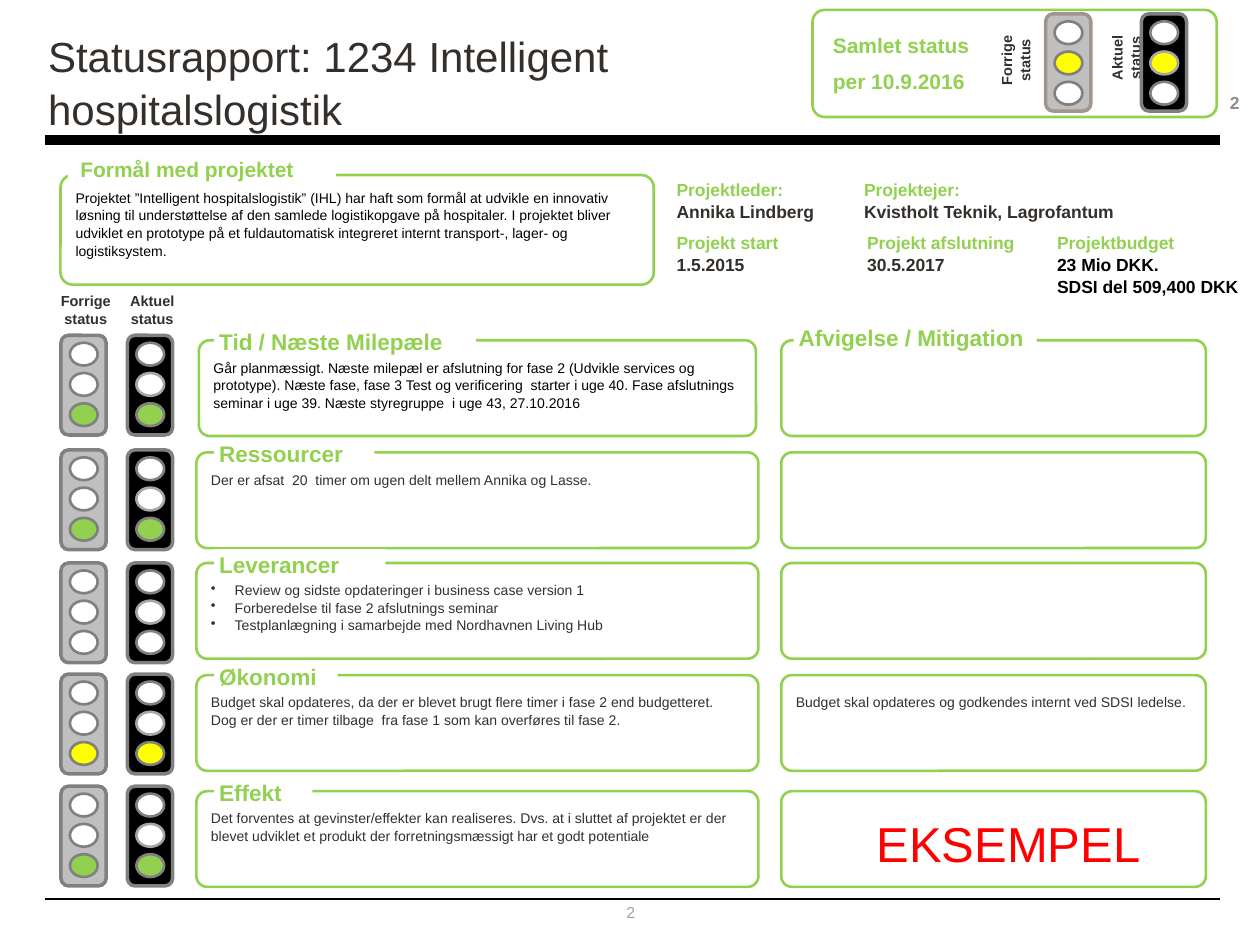
from lxml import etree
from pptx import Presentation
from pptx import util as u
from pptx.dml.color import RGBColor
from pptx.enum import shapes, text
from pptx.oxml.ns import qn

GREEN, YELLOW, WHITE, BLACK = "92D050", "FFFF00", "FFFFFF", "000000"
DARK, GREY, SILVER = "342F2B", "808080", "BFBFBF"
ROUND = shapes.MSO_SHAPE.ROUNDED_RECTANGLE
RECT = shapes.MSO_SHAPE.RECTANGLE
OVAL = shapes.MSO_SHAPE.OVAL
LEFT, CENTER, RIGHT = text.PP_ALIGN.LEFT, text.PP_ALIGN.CENTER, text.PP_ALIGN.RIGHT
TOP, MIDDLE = text.MSO_ANCHOR.TOP, text.MSO_ANCHOR.MIDDLE

deck = Presentation()
deck.slide_width, deck.slide_height = u.Cm(25.4), u.Cm(19.05)
slide = deck.slides.add_slide(deck.slide_layouts[5])


def draw(kind, at, fill=None, line=None, width=1.5, corner=None):
    item = slide.shapes.add_shape(kind, *[u.Cm(n) for n in at])
    item.shadow.inherit = False
    if fill:
        item.fill.solid()
        item.fill.fore_color.rgb = RGBColor.from_string(fill)
    else:
        item.fill.background()
    if line:
        item.line.color.rgb = RGBColor.from_string(line)
        item.line.width = u.Pt(width)
    else:
        item.line.fill.background()
    if corner:
        item.adjustments[0] = corner
    return item


def write(words, at=None, holder=None, size=8, colors=(DARK,), bold=False, align=LEFT,
          anchor=TOP, insets=(0, 0, 0, 0), before=0, bullet=None, wrap=True, turn=0):
    holder = holder or slide.shapes.add_textbox(*[u.Cm(n) for n in at])
    holder.rotation = turn
    frame = holder.text_frame
    frame.auto_size = text.MSO_AUTO_SIZE.NONE
    frame.word_wrap = wrap
    frame.vertical_anchor = anchor
    (frame.margin_left, frame.margin_top,
     frame.margin_right, frame.margin_bottom) = [u.Cm(n) for n in insets]
    for index, line in enumerate(words.split("\n")):
        paragraph = frame.paragraphs[0] if index == 0 else frame.add_paragraph()
        paragraph.text = line
        paragraph.alignment = align
        paragraph.line_spacing = 1.05
        paragraph.space_before = u.Pt(before if index else 0)
        if bullet:
            properties = paragraph._p.get_or_add_pPr()
            properties.set("marL", str(u.Cm(0.48)))
            properties.set("indent", str(-u.Cm(0.48)))
            etree.SubElement(properties, qn("a:buChar")).set("char", bullet)
        paragraph.font.name = "Arial"
        paragraph.font.size = u.Pt(size)
        paragraph.font.bold = bold
        paragraph.font.color.rgb = RGBColor.from_string(colors[min(index, len(colors) - 1)])


title = slide.shapes.title
title.left, title.top, title.width, title.height = [u.Cm(n) for n in (0.97, 0.56, 14.58, 2.06)]
write("Statusrapport: 1234 Intelligent hospitalslogistik", holder=title, size=24)

for rule_y, weight in ((2.82, 6), (18.13, 1)):
    rule = slide.shapes.add_connector(
        shapes.MSO_CONNECTOR.STRAIGHT, u.Cm(0.9), u.Cm(rule_y), u.Cm(24.6), u.Cm(rule_y))
    rule.line.color.rgb = RGBColor.from_string(BLACK)
    rule.line.width = u.Pt(weight)
    etree.SubElement(rule._element.spPr, qn("a:effectLst"))

write("2", (12.12, 18.19, 1.19, 0.38), size=9, colors=["A59D95"], align=CENTER, anchor=MIDDLE)
write("2", (23.47, 1.55, 1.52, 1.02), size=10, colors=["8C8C8C"], bold=True,
      align=RIGHT, anchor=MIDDLE)

purpose = draw(ROUND, (1.22, 3.53, 11.96, 2.21), WHITE, GREEN, corner=0.113)
write("Projektet ”Intelligent hospitalslogistik” (IHL) har haft som formål at udvikle en innovativ "
      "løsning til understøttelse af den samlede logistikopgave på hospitaler. I projektet bliver "
      "udviklet en prototype på et fuldautomatisk integreret internt transport-, lager- og "
      "logistiksystem.", holder=purpose, colors=[BLACK], insets=(0.23, 0.2, 0.23, 0.13))
purpose_heading = draw(RECT, (1.37, 3, 5.41, 0.76), WHITE)
write("Formål med projektet", holder=purpose_heading, size=12, colors=[GREEN], bold=True,
      insets=(0.25, 0.13, 0.25, 0.13))

facts = [
    ("Projektleder:\nAnnika Lindberg", 13.64, 3.58, 3.15, DARK),
    ("Projektejer:\nKvistholt Teknik, Lagrofantum", 17.42, 3.58, 6.88, DARK),
    ("Projekt start\n1.5.2015", 13.64, 4.65, 3.84, DARK),
    ("Projekt afslutning\n30.5.2017", 17.48, 4.65, 3.84, DARK),
    ("Projektbudget\n23 Mio DKK.\nSDSI del 509,400 DKK", 21.31, 4.65, 3.84, BLACK),
]
for fact, x, y, width, color in facts:
    write(fact, (x, y, width, 0.86), size=10, colors=[GREEN, color], bold=True)

draw(ROUND, (16.38, 0.2, 8.15, 2.16), line=GREEN, corner=0.113)
write("Samlet status\nper 10.9.2016", (16.79, 0.64, 3.96, 1.24), size=12, colors=[GREEN],
      bold=True, before=5.5)

for caption, x, y, width, turn in [
    ("Forrige status", 19.69, 0.86, 1.52, 270),
    ("Aktuel status", 21.95, 0.81, 1.45, 270),
    ("Forrige status", 0.97, 5.87, 1.52, 0),
    ("Aktuel status", 2.36, 5.87, 1.42, 0),
]:
    write(caption, (x, y, width, 0.71), size=8.3, bold=True, align=CENTER, turn=turn)

areas = [
    ("Tid / Næste Milepæle", 5.28, 6.86, 6.76, (WHITE, WHITE, GREEN),
     "Går planmæssigt. Næste milepæl er afslutning for fase 2 (Udvikle services og prototype). "
     "Næste fase, fase 3 Test og verificering  starter i uge 40. Fase afslutnings seminar i uge 39. "
     "Næste styregruppe  i uge 43, 27.10.2016", ""),
    ("Ressourcer", 3.23, 9.12, 9.07, (WHITE, WHITE, GREEN),
     "Der er afsat  20  timer om ugen delt mellem Annika og Lasse.", ""),
    ("Leverancer", 3.45, 11.35, 11.35, (WHITE, WHITE, WHITE),
     "Review og sidste opdateringer i business case version 1\n"
     "Forberedelse til fase 2 afslutnings seminar\n"
     "Testplanlægning i samarbejde med Nordhavnen Living Hub", ""),
    ("Økonomi", 2.49, 13.61, 13.59, (WHITE, WHITE, YELLOW),
     "Budget skal opdateres, da der er blevet brugt flere timer i fase 2 end budgetteret. Dog er "
     "der er timer tilbage  fra fase 1 som kan overføres til fase 2.",
     "Budget skal opdateres og godkendes internt ved SDSI ledelse."),
    ("Effekt", 1.98, 15.95, 15.85, (WHITE, WHITE, GREEN),
     "Det forventes at gevinster/effekter kan realiseres. Dvs. at i sluttet af projektet er der "
     "blevet udviklet et produkt der forretningsmæssigt har et godt potentiale", ""),
]
headings = [("Afvigelse / Mitigation", 16, 6.5, 4.9)]
signals = [(21.08, 0.28, 1.96, SILVER, "A1968D", (WHITE, YELLOW, WHITE)),
           (23.01, 0.28, 1.96, BLACK, GREY, (WHITE, YELLOW, WHITE))]
for area, heading_width, y, signal_y, lamps, status, mitigation in areas:
    first = area == areas[0][0]
    x, width = (4.01, 11.23) if first else (3.96, 11.33)
    for content, box_x, box_width in ((status, x, width), (mitigation, 15.75, 8.56)):
        box = draw(ROUND, (box_x, y, box_width, 1.93), WHITE, GREEN, corner=0.113)
        if content:
            write(content, holder=box, colors=[BLACK if first else DARK],
                  insets=(0.23, 0.3, 0.23, 0.13), bullet="•" if "\n" in content else None)
    headings.append((area, 4.32, y - 0.28, heading_width))
    signals.append((1.23, signal_y, 2.01, SILVER, GREY, lamps))
    signals.append((2.57, signal_y, 2.01, BLACK, GREY, lamps))

for heading, x, y, width in headings:
    label = draw(RECT, (x, y, width, 0.56), WHITE)
    write(heading, holder=label, size=12.9, colors=[GREEN], bold=True, insets=(0.1, 0, 0, 0))

for x, y, height, casing, edge, lamps in signals:
    draw(ROUND, (x, y, 0.91, height), casing, edge, 2)
    for position, lamp in enumerate(lamps):
        rim = "A6A6A6" if casing == BLACK and position == 1 else GREY
        draw(OVAL, (x + 0.18, y + 0.15 + position * 0.61, 0.56, 0.46), lamp, rim)

write("EKSEMPEL", (17.42, 16.21, 5.89, 1.45), size=28, colors=["FF0000"], wrap=False,
      insets=(0.25, 0.13, 0.25, 0.13))

deck.save("out.pptx")
